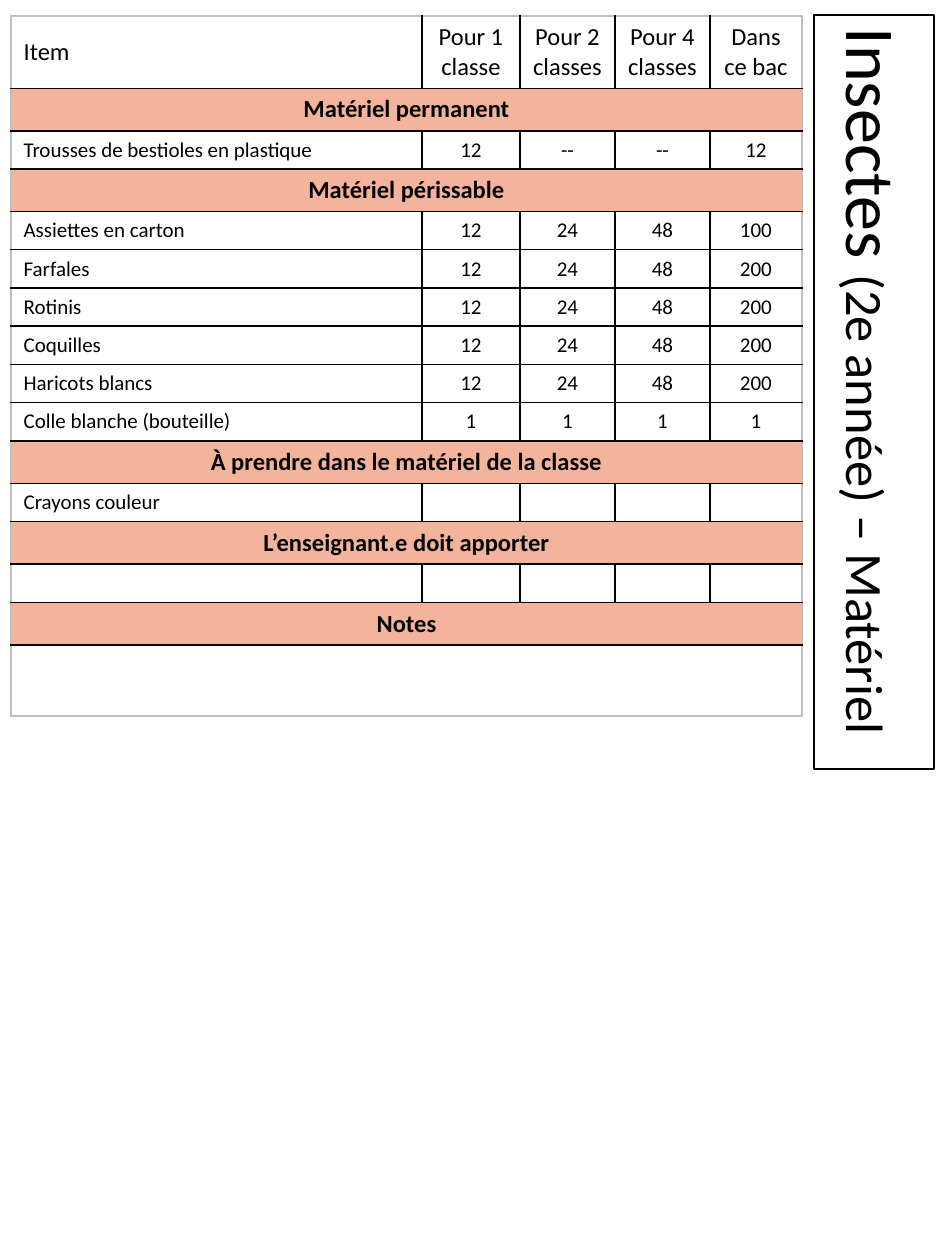
from lxml import etree
from pptx import Presentation
from pptx import util as u
from pptx.dml.color import RGBColor
from pptx.enum import text
from pptx.oxml.ns import qn

# Content
TITLE = [("Insectes ", 40), ("(2e année) – Matériel", 30)]
HEADER = ["Item", "Pour 1 classe", "Pour 2 classes", "Pour 4 classes", "Dans ce bac"]
SECTIONS = [
    ("Matériel permanent", [
        ["Trousses de bestioles en plastique", "12", "--", "--", "12"]]),
    ("Matériel périssable", [
        ["Assiettes en carton", "12", "24", "48", "100"],
        ["Farfales", "12", "24", "48", "200"],
        ["Rotinis", "12", "24", "48", "200"],
        ["Coquilles", "12", "24", "48", "200"],
        ["Haricots blancs", "12", "24", "48", "200"],
        ["Colle blanche (bouteille)", "1", "1", "1", "1"]]),
    ("À prendre dans le matériel de la classe", [
        ["Crayons couleur", "", "", "", ""]]),
    ("L’enseignant.e doit apporter", [["", "", "", "", ""]]),
    ("Notes", []),
]

# Format
FONT, BLACK, GREY, SALMON = "Calibri", "000000", "BFBFBF", "F4B39B"
COLS = [411, 98, 95, 95, 92]
TABLE_LEFT, TABLE_TOP = 11, 16
TITLE_BOX = (497, 332, 754, 120)
STYLES = {  # row kind: height, text size, bold, fill, merged
    "header": (72, 14, False, None, False),
    "band": (42, 14, True, SALMON, True),
    "item": (38, 12, False, None, False),
    "notes": (71, 12, False, None, True),
}


def px(n):
    return u.Emu(n * 914400 // 126)


def color(value):
    return RGBColor.from_string(value)


def set_font(font, size, bold=False):
    for key, value in {"name": FONT, "size": u.Pt(size), "bold": bold}.items():
        setattr(font, key, value)
    font.color.rgb = color(BLACK)


def set_borders(cell, edges):
    tcPr = cell._tc.get_or_add_tcPr()
    for i, (side, value) in enumerate(edges.items()):
        ln = etree.Element(qn("a:" + side), w=str(u.Pt(1)))
        fill = etree.SubElement(ln, qn("a:solidFill"))
        etree.SubElement(fill, qn("a:srgbClr"), val=value)
        tcPr.insert(i, ln)


def write_cell(cell, words, size, bold, centered):
    cell.vertical_anchor = text.MSO_ANCHOR.MIDDLE
    p = cell.text_frame.paragraphs[0]
    p.alignment = text.PP_ALIGN.CENTER if centered else text.PP_ALIGN.LEFT
    if words:
        r = p.add_run()
        r.text = words
        set_font(r.font, size, bold)
    else:  # an empty cell keeps the row's text size
        etree.SubElement(p._p, qn("a:endParaRPr"), sz=str(size * 100))


prs = Presentation()
prs.slide_width, prs.slide_height = px(945), px(1260)
s = prs.slides.add_slide(prs.slide_layouts[5])

# Rotated title
sp = s.shapes.title
sp.left, sp.top, sp.width, sp.height = map(px, TITLE_BOX)
sp.rotation = 90
sp.line.color.rgb = color(BLACK)
sp.line.width = u.Pt(1.5)
tf = sp.text_frame
for key, value in {"word_wrap": True, "auto_size": text.MSO_AUTO_SIZE.NONE,
                   "vertical_anchor": text.MSO_ANCHOR.MIDDLE}.items():
    setattr(tf, key, value)
p = tf.paragraphs[0]
p.alignment = text.PP_ALIGN.LEFT
for words, size in TITLE:
    r = p.add_run()
    r.text = words
    set_font(r.font, size)

# Table rows in order
rows = [("header", HEADER)]
for name, items in SECTIONS:
    rows.append(("band", [name]))
    rows += [("item", item) for item in items]
rows.append(("notes", [""]))

# Table
heights = [STYLES[kind][0] for kind, _ in rows]
table = s.shapes.add_table(len(rows), len(COLS), px(TABLE_LEFT), px(TABLE_TOP),
                           px(sum(COLS)), px(sum(heights))).table
table.first_row = table.horz_banding = False
for column, width in zip(table.columns, COLS):
    column.width = px(width)

last_row, last_col = len(rows) - 1, len(COLS) - 1
for i, (kind, words) in enumerate(rows):
    height, size, bold, fill, merged = STYLES[kind]
    table.rows[i].height = px(height)
    if merged:
        table.cell(i, 0).merge(table.cell(i, last_col))
    for j in range(len(COLS)):
        cell = table.cell(i, j)
        if fill:
            cell.fill.solid()
            cell.fill.fore_color.rgb = color(fill)
        else:
            cell.fill.background()
        set_borders(cell, {
            "lnL": GREY if j == 0 else BLACK,
            "lnR": GREY if merged or j == last_col else BLACK,
            "lnT": GREY if i == 0 else BLACK,
            "lnB": GREY if i == last_row else BLACK,
        })
        write_cell(cell, words[j] if j < len(words) else "", size, bold, merged or j > 0)

prs.save("out.pptx")
